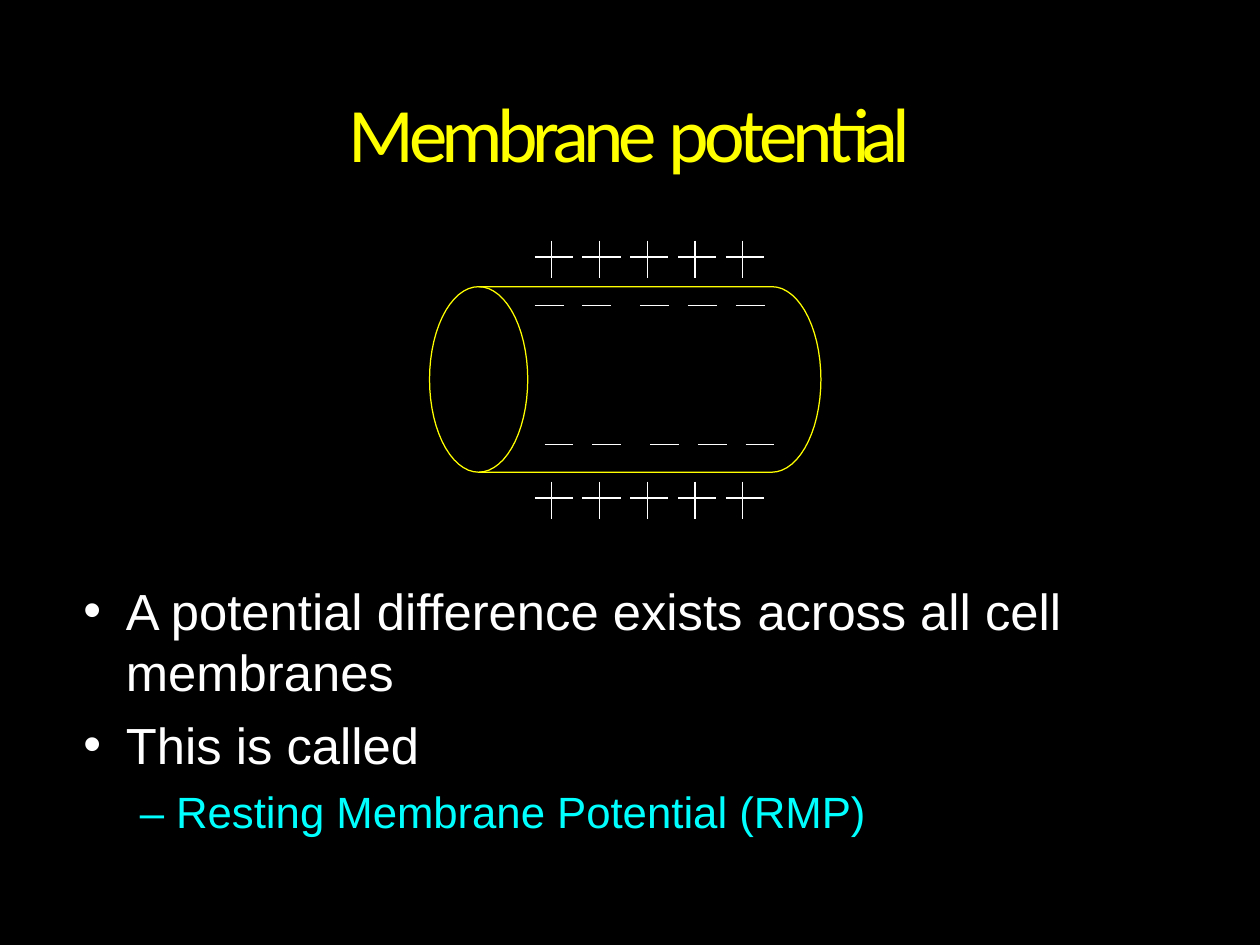
from math import cos, sin, radians
from lxml import etree
from pptx import Presentation
from pptx import util as u
from pptx.dml.color import RGBColor
from pptx.enum import shapes, text
from pptx.oxml.ns import qn

YELLOW, WHITE, CYAN, BLACK = "FFFF00", "FFFFFF", "00FFFF", "000000"

# Runs are (words, letter spacing in points)
TITLE = [dict(runs=[("Membrane ", -3.2), ("potential", -2.9)], size=44,
              font="Calibri", color=YELLOW, before=0.9,
              align=text.PP_ALIGN.CENTER)]
POINT = dict(size=29, font="Arial", color=WHITE, left=0.89, hang=-0.86,
             bullet="•")
POINTS = [
    dict(POINT, before=0.8, runs=[
        ("A ", -0.1), ("potential difference exists ", 0),
        ("across ", -0.1), ("all cell membranes", 0)]),
    dict(POINT, before=6.9, runs=[("This is called", 0)]),
    dict(runs=[("– Resting Membrane Potential (RMP)", 0)], size=25,
         font="Arial", color=CYAN, before=5.9, left=1.17),
]

# Cell tube and charges, in cm
TUBE = dict(near=9.65, far=15.56, mid=7.65, rx=0.99, ry=1.87)
START, PITCH, COUNT = 10.78, 0.963, 5
PLUS, RISE, DROP, STEM, MINUS = 0.77, 0.33, 0.42, 0.34, 0.58
GAP = 0.2                    # wider gap after the second minus
PLUS_ROWS = [5.18, 10.04]
MINUS_ROWS = [(START, 6.16), (10.98, 8.96)]


def paint(name):
    return RGBColor.from_string(name)


def write(slide, box, paras, anchor):
    frame = slide.shapes.add_textbox(*map(u.Cm, box)).text_frame
    form = dict(word_wrap=True, vertical_anchor=anchor, margin_left=0,
                margin_right=0, margin_top=u.Cm(0.03), margin_bottom=0)
    for key, val in form.items():
        setattr(frame, key, val)
    for num, item in enumerate(paras):
        para = frame.add_paragraph() if num else frame.paragraphs[0]
        para.space_before = u.Pt(item["before"])
        para.alignment = item.get("align")
        props = para._p.get_or_add_pPr()
        props.set("marL", str(u.Cm(item.get("left", 0))))
        props.set("indent", str(u.Cm(item.get("hang", 0))))
        if "bullet" in item:
            etree.SubElement(props, qn("a:buFont")).set("typeface", "Arial")
            etree.SubElement(props, qn("a:buChar")).set("char", item["bullet"])
        for words, space in item["runs"]:
            run = para.add_run()
            run.text = words
            look = dict(size=u.Pt(item["size"]), name=item["font"])
            for key, val in look.items():
                setattr(run.font, key, val)
            run.font.color.rgb = paint(item["color"])
            run._r.get_or_add_rPr().set("spc", str(round(space * 100)))


def arc(x, first, last):
    """Points on a tube end centred at x, clockwise from angle to angle."""
    return [(x + TUBE["rx"] * cos(radians(a)),
             TUBE["mid"] + TUBE["ry"] * sin(radians(a)))
            for a in range(first, last + 1, 6)]


def trace(slide, points, close):
    spots = [(u.Cm(x), u.Cm(y)) for x, y in points]
    build = slide.shapes.build_freeform(*spots[0])
    build.add_line_segments(spots[1:], close=close)
    shape = build.convert_to_shape()
    shape.shadow.inherit = False
    shape.fill.background()
    shape.line.color.rgb = paint(YELLOW)
    shape.line.width = u.Pt(0.72)


def stroke(slide, *ends):
    line = slide.shapes.add_connector(shapes.MSO_CONNECTOR.STRAIGHT,
                                      *map(u.Cm, ends))
    line.line.color.rgb = paint(WHITE)
    line.line.width = u.Pt(0.72)
    etree.SubElement(line._element.spPr, qn("a:effectLst"))


def main():
    deck = Presentation()
    deck.slide_width, deck.slide_height = u.Cm(25.4), u.Cm(19.05)
    slide = deck.slides.add_slide(deck.slide_layouts[6])
    fill = slide.background.fill
    fill.solid()
    fill.fore_color.rgb = paint(BLACK)

    write(slide, (6.6, 1.7, 12.19, 1.9), TITLE, text.MSO_ANCHOR.MIDDLE)
    write(slide, (1.65, 11.66, 19.91, 5.36), POINTS, text.MSO_ANCHOR.TOP)

    near, far = TUBE["near"], TUBE["far"]
    trace(slide, arc(near, 90, 270) + arc(far, -90, 90), True)
    trace(slide, arc(near, -90, 90), False)

    for left, y in MINUS_ROWS:
        for num in range(COUNT):
            x = left + num * PITCH + (GAP if num > 1 else 0)
            stroke(slide, x, y, x + MINUS, y)
    for y in PLUS_ROWS:
        for num in range(COUNT):
            x = START + num * PITCH
            stroke(slide, x, y, x + PLUS, y)
            stroke(slide, x + STEM, y - RISE, x + STEM, y + DROP)

    deck.save("out.pptx")


if __name__ == "__main__":
    main()
